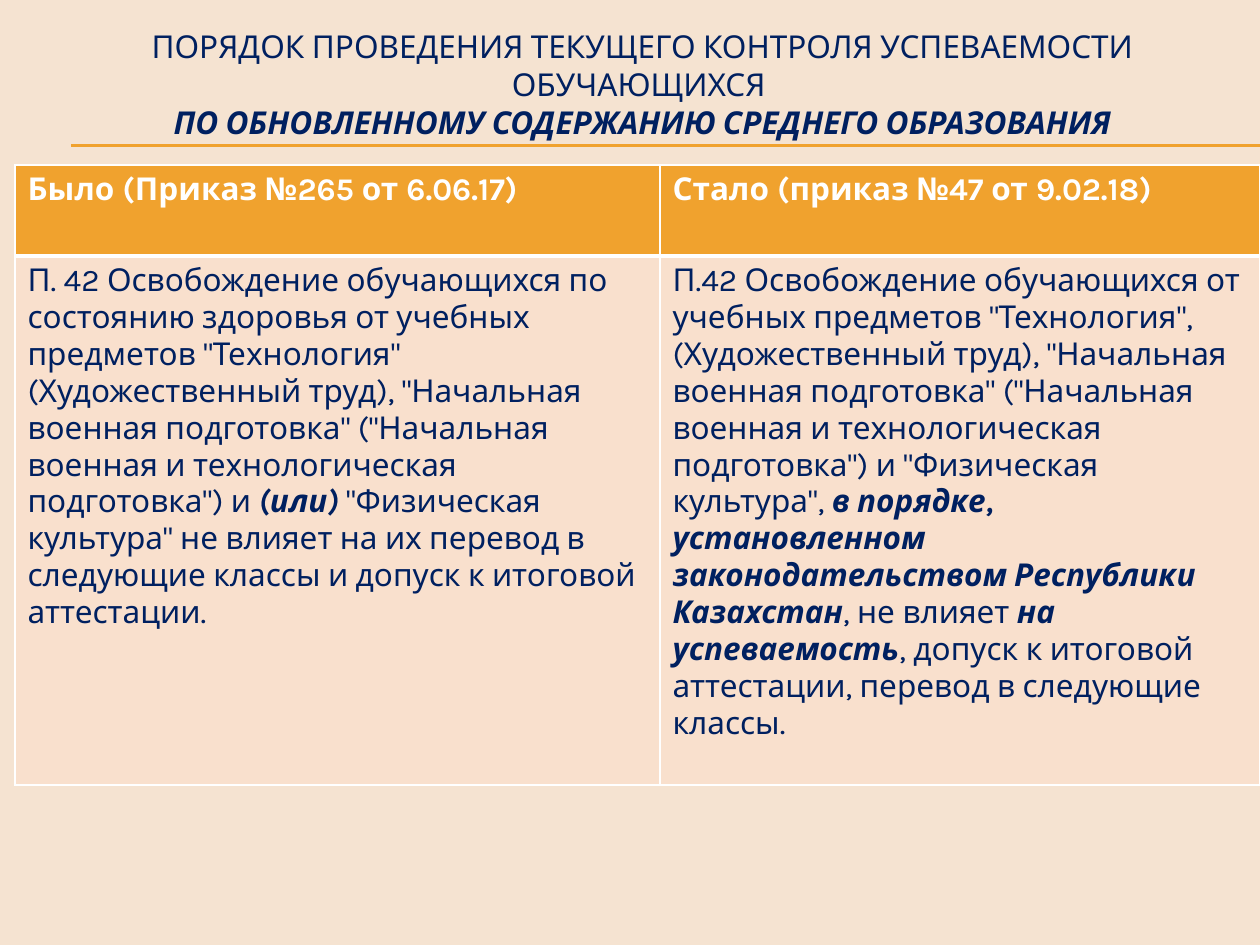
from lxml.etree import SubElement
from pptx import Presentation
from pptx.dml.color import RGBColor
from pptx.enum.shapes import MSO_CONNECTOR as Connector
from pptx.enum.text import MSO_ANCHOR as Anchor, PP_ALIGN as Align
from pptx.oxml.ns import qn
from pptx.util import Pt

EMU_PER_PX = 914400 / 126
NAVY, AMBER, PEACH, SAND, WHITE = "002060", "F0A22E", "F9E0CD", "F5E3D1", "FFFFFF"
PLAIN = {"bold": False, "italic": False}
STRONG = {"bold": True, "italic": True}
HEADING = {"bold": True, "italic": False}

TITLE = [
    ("ПОРЯДОК ПРОВЕДЕНИЯ ТЕКУЩЕГО КОНТРОЛЯ УСПЕВАЕМОСТИ ОБУЧАЮЩИХСЯ \v", PLAIN),
    ("ПО ОБНОВЛЕННОМУ СОДЕРЖАНИЮ СРЕДНЕГО ОБРАЗОВАНИЯ", STRONG),
]
HEADINGS = [
    [("Было (Приказ №265 от 6.06.17)", HEADING)],
    [("Стало (приказ №47 от 9.02.18)", HEADING)],
]
CLAUSES = [
    [
        ('П. 42 Освобождение обучающихся по состоянию здоровья от учебных предметов '
         '"Технология" (Художественный труд), "Начальная военная подготовка" '
         '("Начальная военная и технологическая подготовка") и ', PLAIN),
        ("(или) ", STRONG),
        ('"Физическая культура" не влияет на их перевод в следующие классы '
         'и допуск к итоговой аттестации.', PLAIN),
    ],
    [
        ('П.42 Освобождение обучающихся от учебных предметов "Технология", '
         '(Художественный труд), "Начальная военная подготовка" ("Начальная военная '
         'и технологическая подготовка") и "Физическая культура", ', PLAIN),
        ("в порядке, установленном законодательством Республики Казахстан", STRONG),
        (", не влияет ", PLAIN),
        ("на успеваемость", STRONG),
        (", допуск к итоговой аттестации, перевод в следующие классы.", PLAIN),
    ],
]


def px(length):
    return round(length * EMU_PER_PX)


def color(value):
    return RGBColor.from_string(value)


def write(paragraph, pieces, ink):
    for words, style in pieces:
        if words.endswith("\v"):
            run = paragraph.add_run()
            run.text = words[:-1]
            paragraph.add_line_break()
        else:
            run = paragraph.add_run()
            run.text = words
        for key, value in {"name": "Karla", "size": Pt(18), **style}.items():
            setattr(run.font, key, value)
        run.font.color.rgb = color(ink)


def add_rules(slide, left, top, width):
    for y in (top, top + 1):
        rule = slide.shapes.add_connector(
            Connector.STRAIGHT, px(left), px(y), px(left + width), px(y))
        rule.line.color.rgb = color(AMBER)
        rule.line.width = Pt(0.75)
        SubElement(rule._element.spPr, qn("a:effectLst"))


def add_title(slide, left, top, width, height):
    frame = slide.shapes.add_textbox(px(left), px(top), px(width), px(height)).text_frame
    frame.word_wrap = True
    frame.vertical_anchor = Anchor.MIDDLE
    heading = frame.paragraphs[0]
    heading.alignment = Align.CENTER
    write(heading, TITLE, NAVY)


def add_borders(cell, points):
    properties = cell._tc.get_or_add_tcPr()
    for side, width in points.items():
        edge = SubElement(properties, qn(f"a:ln{side}"), w=str(Pt(width)))
        paint = SubElement(edge, qn("a:solidFill"))
        SubElement(paint, qn("a:srgbClr"), val=WHITE)


def add_comparison(slide, left, top, width, height):
    split, header = 645, 91
    table = slide.shapes.add_table(2, 2, px(left), px(top), px(width), px(height)).table
    for column, size in zip(table.columns, (split, width - split)):
        column.width = px(size)
    for row, size in zip(table.rows, (header, height - header)):
        row.height = px(size)
    bands = [
        (HEADINGS, AMBER, WHITE, {"L": 1, "R": 1, "T": 1, "B": 3}),
        (CLAUSES, PEACH, NAVY, {"L": 1, "R": 1, "T": 3, "B": 1}),
    ]
    for row, (texts, fill, ink, borders) in zip(table.rows, bands):
        for cell, pieces in zip(row.cells, texts):
            add_borders(cell, borders)
            cell.fill.solid()
            cell.fill.fore_color.rgb = color(fill)
            write(cell.text_frame.paragraphs[0], pieces, ink)


def main():
    deck = Presentation()
    deck.slide_width, deck.slide_height = px(1260), px(945)
    slide = deck.slides.add_slide(deck.slide_layouts[6])
    slide.background.fill.solid()
    slide.background.fill.fore_color.rgb = color(SAND)
    add_rules(slide, 71, 145, 1189)
    add_title(slide, 44, 26, 1197, 116)
    add_comparison(slide, 15, 165, 1245, 620)
    deck.save("out.pptx")


if __name__ == "__main__":
    main()
